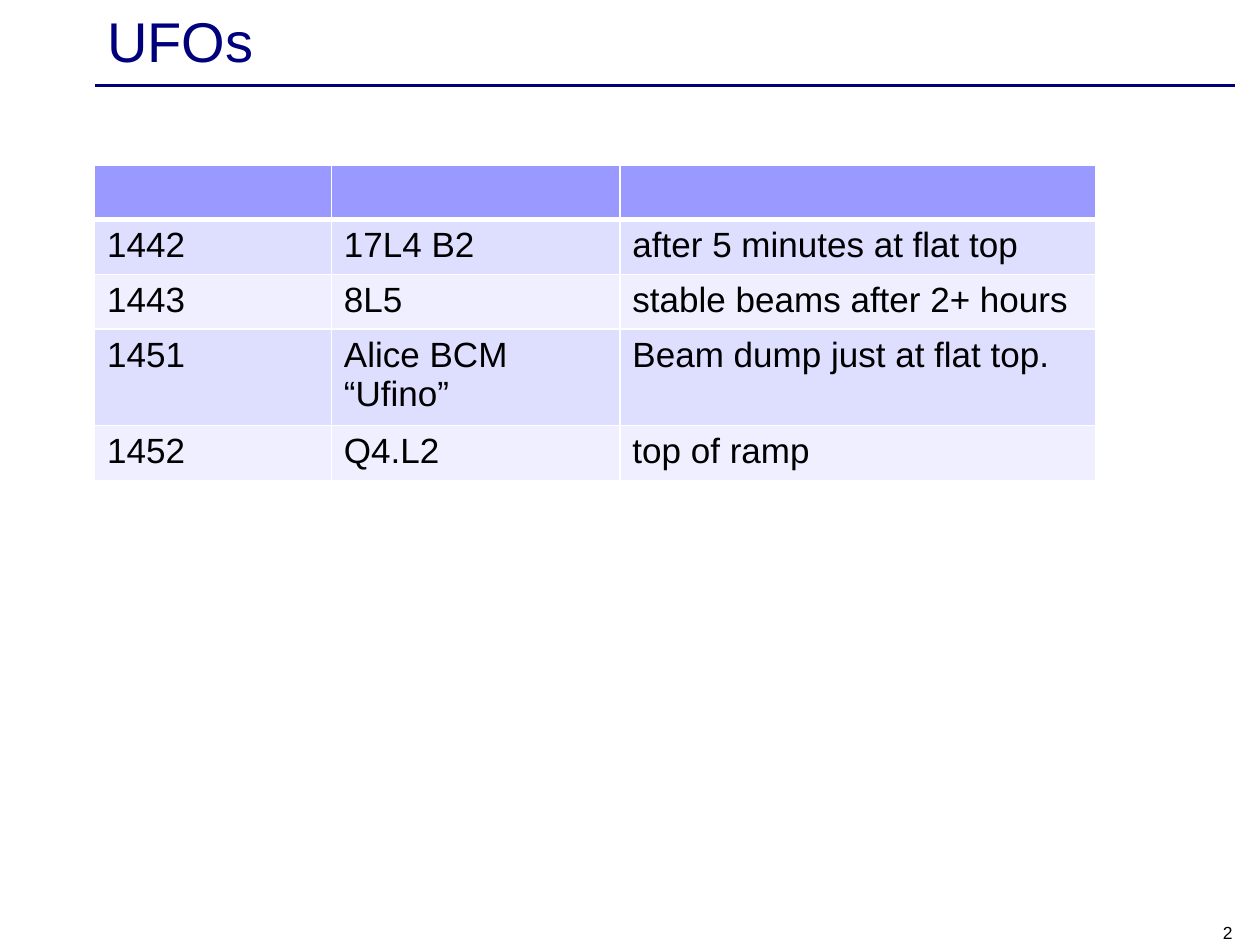
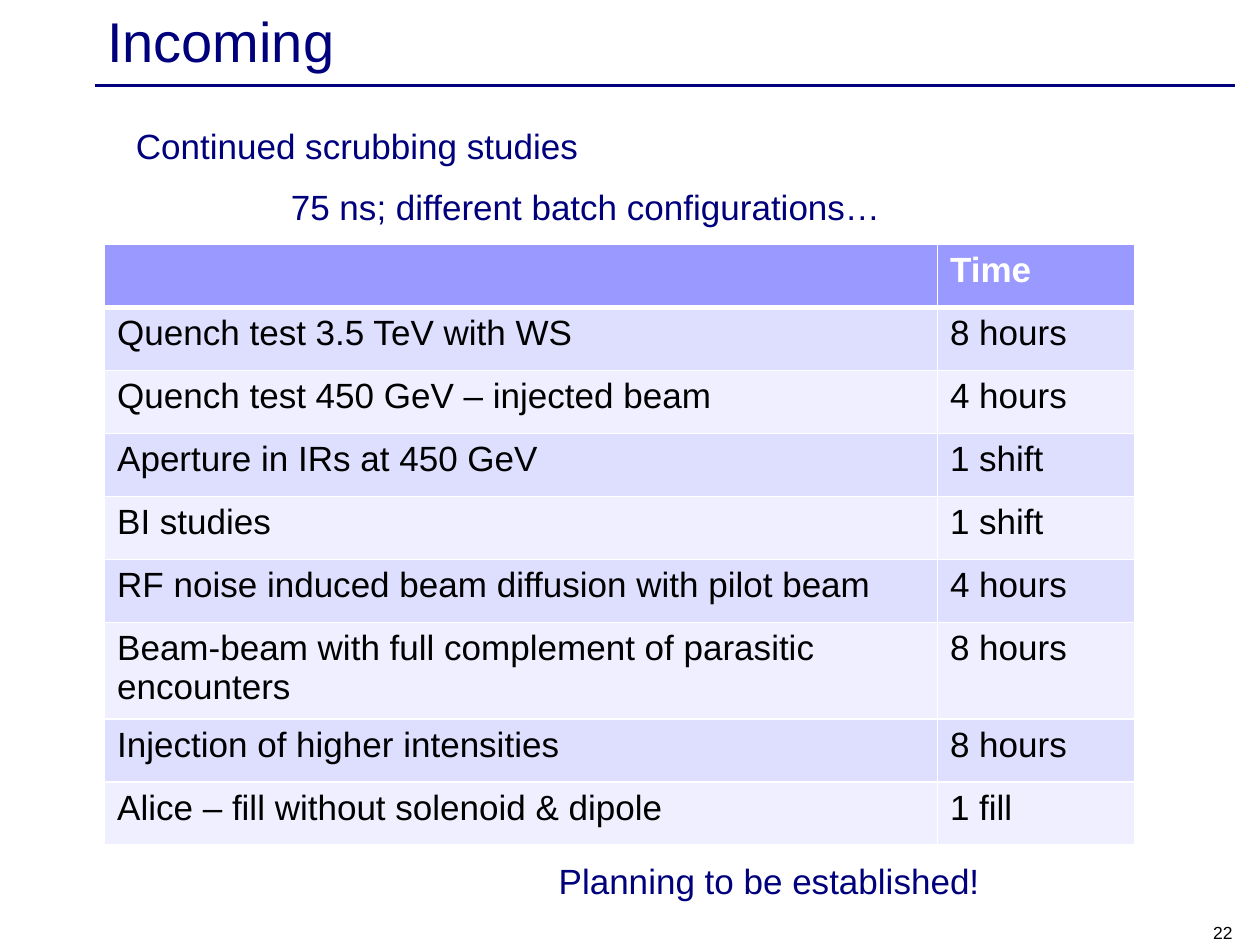
"""Build two accelerator status slides: observed UFO events and incoming studies."""
from typing import NamedTuple

import lxml.etree
import pptx
import pptx.dml.color
import pptx.enum.shapes
import pptx.enum.text
import pptx.oxml
import pptx.oxml.ns
import pptx.slide
import pptx.table
import pptx.text.text
import pptx.util

Inches = pptx.util.Inches
Pt = pptx.util.Pt
Align = pptx.enum.text.PP_ALIGN
Anchor = pptx.enum.text.MSO_ANCHOR
qn = pptx.oxml.ns.qn

FONT = "Arial"
NAVY, BLACK, WHITE = "00007D", "000000", "FFFFFF"
HEADER_FILL = "9999FF"
BAND_FILLS = ("DEDEFF", "EFEFFF")
TITLE_SIZE, TEXT_SIZE, NUMBER_SIZE = 32, 20, 10
GRID_WIDTH, HEADER_RULE_WIDTH = 1, 3


class Box(NamedTuple):
    """Left, top, width and height in inches."""

    left: float
    top: float
    width: float
    height: float

    def lengths(self) -> tuple:
        """Return the four values as lengths."""
        return tuple(Inches(value) for value in self)


class Line(NamedTuple):
    """One paragraph with its left indent in inches."""

    text: str
    indent: float = 0


class Note(NamedTuple):
    """A block of navy text."""

    box: Box
    lines: list[Line]
    align: Align = Align.LEFT


class Schedule(NamedTuple):
    """A banded table whose first row is the header."""

    left: float
    top: float
    columns: list[float]
    row_height: float
    rows: list[tuple[str, ...]]


class Page(NamedTuple):
    """The content of one slide."""

    title: str
    number: int
    schedule: Schedule
    notes: list[Note]


TITLE_BOX = Box(0.75, 0.03, 9, 0.57)
NUMBER_BOX = Box(7.55, 7.25, 2.33, 0.28)
RULE_LEFT, RULE_RIGHT, RULE_TOP = 0.75, 9.8, 0.68

PAGES = [
    Page(
        "UFOs",
        2,
        Schedule(0.75, 1.31, [1.88, 2.29, 3.78], 0.41, [
            ("", "", ""),
            ("1442", "17L4 B2", "after 5 minutes at flat top"),
            ("1443", "8L5", "stable beams after 2+ hours"),
            ("1451", "Alice BCM “Ufino”", "Beam dump just at flat top."),
            ("1452", "Q4.L2", "top of ramp"),
        ]),
        [],
    ),
    Page(
        "Incoming",
        22,
        Schedule(0.83, 1.94, [6.61, 1.57], 0.5, [
            ("", "Time"),
            ("Quench test 3.5 TeV with WS", "8 hours"),
            ("Quench test 450 GeV – injected beam", "4 hours"),
            ("Aperture in IRs at 450 GeV", "1 shift"),
            ("BI studies", "1 shift"),
            ("RF noise induced beam diffusion with pilot beam", "4 hours"),
            ("Beam-beam with full complement of parasitic encounters", "8 hours"),
            ("Injection of higher intensities", "8 hours"),
            ("Alice – fill without solenoid & dipole", "1 fill"),
        ]),
        [
            Note(Box(0.98, 0.94, 8.19, 0.9), [
                Line("Continued scrubbing studies"),
                Line("75 ns; different batch configurations…", 1.23),
            ]),
            Note(Box(3.35, 6.77, 5.51, 0.44), [Line("Planning to be established!")], Align.CENTER),
        ],
    ),
]


def rgb(code: str) -> pptx.dml.color.RGBColor:
    """Turn a hex string into a colour."""
    return pptx.dml.color.RGBColor.from_string(code)


def style(paragraph: pptx.text.text._Paragraph, size: float, color: str,
          align: Align = Align.LEFT, bold: bool = False) -> None:
    """Set the alignment and font of a paragraph."""
    paragraph.alignment = align
    font = paragraph.font
    font.name, font.size, font.bold = FONT, Pt(size), bold
    font.color.rgb = rgb(color)


def add_rule(slide: pptx.slide.Slide) -> None:
    """Draw the navy rule below the title."""
    rule = slide.shapes.add_connector(
        pptx.enum.shapes.MSO_CONNECTOR.STRAIGHT,
        Inches(RULE_LEFT), Inches(RULE_TOP), Inches(RULE_RIGHT), Inches(RULE_TOP))
    rule.line.color.rgb = rgb(NAVY)
    rule.line.width = Pt(2)
    lxml.etree.SubElement(rule._element.spPr, qn("a:effectLst"))


def add_title(slide: pptx.slide.Slide, text: str) -> None:
    """Fill and place the title placeholder."""
    title = slide.shapes.title
    title.left, title.top, title.width, title.height = TITLE_BOX.lengths()
    title.text_frame.text = text
    title.text_frame.vertical_anchor = Anchor.MIDDLE
    style(title.text_frame.paragraphs[0], TITLE_SIZE, NAVY)


def add_number(slide: pptx.slide.Slide, number: int) -> None:
    """Write the slide number at the bottom right."""
    frame = slide.shapes.add_textbox(*NUMBER_BOX.lengths()).text_frame
    frame.word_wrap = True
    frame.vertical_anchor = Anchor.BOTTOM
    frame.text = str(number)
    style(frame.paragraphs[0], NUMBER_SIZE, BLACK, Align.RIGHT)


def add_note(slide: pptx.slide.Slide, note: Note) -> None:
    """Write a block of navy text."""
    frame = slide.shapes.add_textbox(*note.box.lengths()).text_frame
    frame.word_wrap = True
    for index, line in enumerate(note.lines):
        paragraph = frame.add_paragraph() if index else frame.paragraphs[0]
        paragraph.text = line.text
        if index:
            paragraph.space_before = Pt(11)
        if line.indent:
            paragraph._p.get_or_add_pPr().set("marL", str(Inches(line.indent)))
        style(paragraph, TEXT_SIZE, NAVY, note.align)


def set_borders(cell: pptx.table._Cell, top: float, bottom: float) -> None:
    """Give a cell white borders, with own widths at top and bottom."""
    properties = cell._tc.get_or_add_tcPr()
    for side, width in zip("LRTB", (GRID_WIDTH, GRID_WIDTH, top, bottom)):
        border = lxml.etree.SubElement(properties, qn(f"a:ln{side}"), w=str(Pt(width)))
        fill = lxml.etree.SubElement(border, qn("a:solidFill"))
        lxml.etree.SubElement(fill, qn("a:srgbClr"), val=WHITE)


def add_schedule(slide: pptx.slide.Slide, schedule: Schedule) -> None:
    """Draw a table with a header row and alternating bands."""
    box = Box(schedule.left, schedule.top, sum(schedule.columns),
              schedule.row_height * len(schedule.rows))
    table = slide.shapes.add_table(
        len(schedule.rows), len(schedule.columns), *box.lengths()).table
    table.first_row = table.horz_banding = False
    for column, width in zip(table.columns, schedule.columns):
        column.width = Inches(width)
    for row_index, entries in enumerate(schedule.rows):
        table.rows[row_index].height = Inches(schedule.row_height)
        is_header = row_index == 0
        band = HEADER_FILL if is_header else BAND_FILLS[(row_index - 1) % 2]
        top = HEADER_RULE_WIDTH if row_index == 1 else GRID_WIDTH
        bottom = HEADER_RULE_WIDTH if is_header else GRID_WIDTH
        for column_index, entry in enumerate(entries):
            cell = table.cell(row_index, column_index)
            set_borders(cell, top, bottom)
            cell.fill.solid()
            cell.fill.fore_color.rgb = rgb(band)
            cell.text = entry
            style(cell.text_frame.paragraphs[0], TEXT_SIZE,
                  WHITE if is_header else BLACK, bold=is_header)


def main() -> None:
    """Build and save the presentation."""
    deck = pptx.Presentation()
    deck.slide_width, deck.slide_height = Inches(10), Inches(7.5)
    title_only = deck.slide_layouts[5]
    for page in PAGES:
        slide = deck.slides.add_slide(title_only)
        add_rule(slide)
        add_title(slide, page.title)
        add_number(slide, page.number)
        add_schedule(slide, page.schedule)
        for note in page.notes:
            add_note(slide, note)
    deck.save("out.pptx")


if __name__ == "__main__":
    main()
